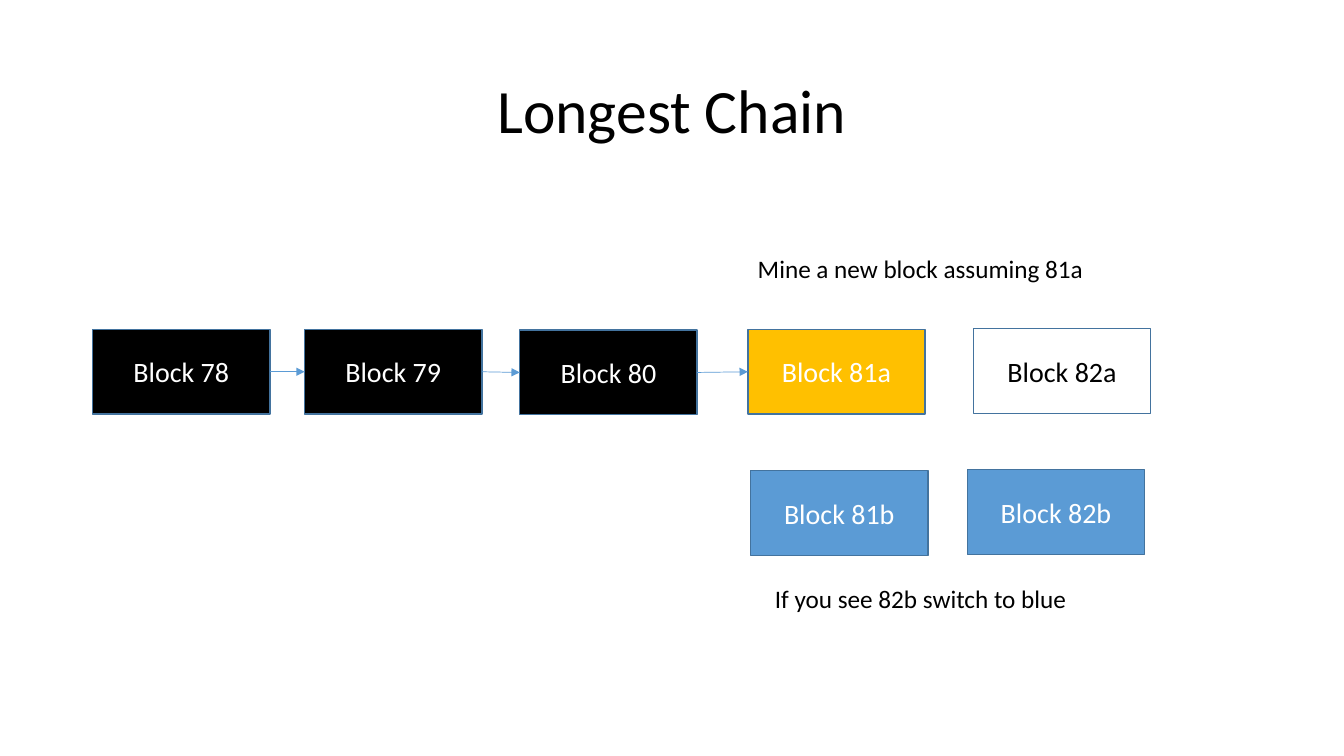
from pptx import Presentation
from pptx.dml.color import RGBColor as Rgb
from pptx.enum.shapes import MSO_CONNECTOR as Link, MSO_SHAPE as Form
from pptx.enum.text import MSO_ANCHOR as Anchor, MSO_AUTO_SIZE as Fit, PP_ALIGN as Align
from pptx.oxml.ns import qn
from pptx.util import Pt
from lxml.etree import SubElement

HUES = {
    "black": "000000",
    "white": "FFFFFF",
    "gold": "FFC000",
    "blue": "5B9BD5",
    "edge": "43739E",
}
WIDE, HIGH = 126.7, 60.5


def hue(name):
    return Rgb.from_string(HUES[name])


def write(frame, text, size=18, color="black", align=Align.LEFT,
          anchor=Anchor.TOP, space=1.0):
    frame.word_wrap = True
    frame.vertical_anchor = anchor
    para = frame.paragraphs[0]
    para.alignment = align
    para.line_spacing = space
    run = para.add_run()
    run.text = text
    run.font.name = "Calibri"
    run.font.size = Pt(size)
    run.font.color.rgb = hue(color)


def label(slide, text, left, top, width, height, fit=Fit.NONE, **style):
    box = slide.shapes.add_textbox(Pt(left), Pt(top), Pt(width), Pt(height))
    write(box.text_frame, text, **style)
    box.text_frame.auto_size = fit


def block(slide, name, left, top, fill, color="white"):
    box = slide.shapes.add_shape(Form.RECTANGLE, Pt(left), Pt(top), Pt(WIDE), Pt(HIGH))
    box.shadow.inherit = False
    box.fill.solid()
    box.fill.fore_color.rgb = hue(fill)
    box.line.color.rgb = hue("edge")
    box.line.width = Pt(1)
    write(box.text_frame, f"Block {name}", size=20, color=color,
          align=Align.CENTER, anchor=Anchor.MIDDLE)
    return box


def arrow(slide, start, end):
    line = slide.shapes.add_connector(Link.STRAIGHT, 0, 0, 0, 0)
    line.begin_connect(start, 3)
    line.end_connect(end, 1)
    line.line.color.rgb = hue("blue")
    line.line.width = Pt(0.5)
    SubElement(line.line._get_or_add_ln(), qn("a:tailEnd"), type="triangle")
    SubElement(line._element.spPr, qn("a:effectLst"))


def main():
    deck = Presentation()
    deck.slide_width, deck.slide_height = Pt(960), Pt(540)
    slide = deck.slides.add_slide(deck.slide_layouts[6])

    label(slide, "Longest Chain", 66, 28.8, 828, 104.4, size=44,
          align=Align.CENTER, anchor=Anchor.MIDDLE, space=0.9)

    chain = [
        block(slide, "78", 66.2, 235.3, "black"),
        block(slide, "79", 217.6, 235.3, "black"),
        block(slide, "80", 371.3, 235.8, "black"),
        block(slide, "81a", 534.2, 235.3, "gold"),
    ]
    for start, end in zip(chain, chain[1:]):
        arrow(slide, start, end)

    block(slide, "82a", 695.3, 234.7, "white", color="black")
    block(slide, "81b", 536.2, 336.3, "blue")
    block(slide, "82b", 691, 335.6, "blue")

    label(slide, "Mine a new block assuming 81a", 534.2, 177.3, 257, 29, fit=Fit.SHAPE_TO_FIT_TEXT)
    label(slide, "If you see 82b switch to blue", 546.4, 412.9, 257, 29, fit=Fit.SHAPE_TO_FIT_TEXT)

    deck.save("out.pptx")


if __name__ == "__main__":
    main()
